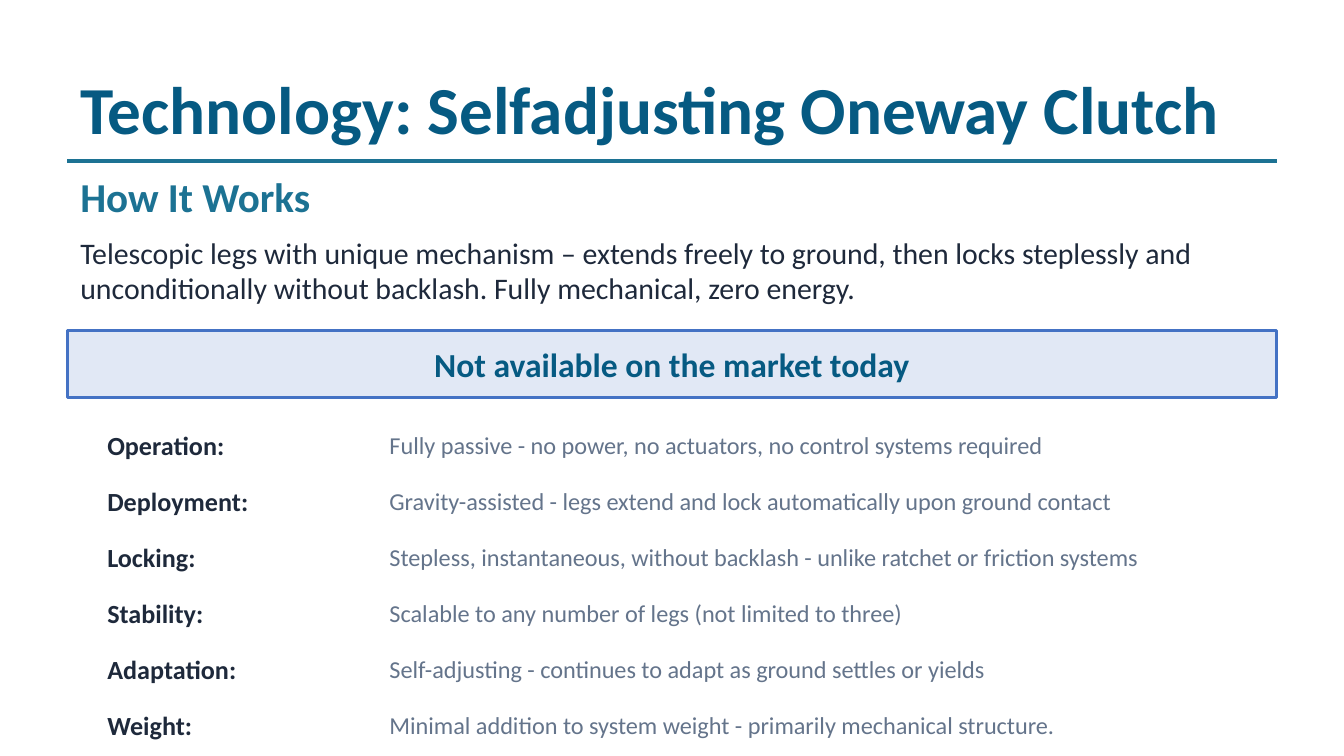
from lxml import etree
from pptx import Presentation
from pptx.dml.color import RGBColor
from pptx.enum.shapes import MSO_CONNECTOR, MSO_SHAPE
from pptx.enum.text import MSO_ANCHOR, PP_ALIGN
from pptx.oxml.ns import qn
from pptx.util import Pt

STRAIGHT = MSO_CONNECTOR.STRAIGHT
RECTANGLE = MSO_SHAPE.RECTANGLE
MIDDLE = MSO_ANCHOR.MIDDLE
LEFT, CENTER = PP_ALIGN.LEFT, PP_ALIGN.CENTER

NAVY, TEAL, INK, SLATE = "065A82", "1C7293", "1E293B", "64748B"
PALE_BLUE, BLUE = "DAE3F3", "4472C4"

MARGIN, CONTENT_WIDTH = 36, 648
LABEL_LEFT, DETAIL_LEFT = 50.4, 201.6
ROWS_TOP, ROW_STEP, ROW_HEIGHT = 227.5, 30, 21.6

FEATURES = [
    ("Operation:", "Fully passive - no power, no actuators, no control systems required"),
    ("Deployment:", "Gravity-assisted - legs extend and lock automatically upon ground contact"),
    ("Locking:", "Stepless, instantaneous, without backlash - unlike ratchet or friction systems"),
    ("Stability:", "Scalable to any number of legs (not limited to three)"),
    ("Adaptation:", "Self-adjusting - continues to adapt as ground settles or yields"),
    ("Weight:", "Minimal addition to system weight - primarily mechanical structure."),
]


def color(value):
    return RGBColor.from_string(value)


class SlideBuilder:
    font = "Calibri"

    def __init__(self, page):
        self.page = page

    def text(self, content, left, top, width, height, size, ink, bold=False, align=LEFT):
        box = self.page.shapes.add_textbox(Pt(left), Pt(top), Pt(width), Pt(height))
        frame = box.text_frame
        frame.word_wrap = True
        frame.vertical_anchor = MIDDLE
        para = frame.paragraphs[0]
        para.alignment = align
        span = para.add_run()
        span.text = content
        span.font.name = self.font
        span.font.size = Pt(size)
        span.font.bold = bold
        span.font.color.rgb = color(ink)

    def rule(self, left, top, width, ink, weight):
        line = self.page.shapes.add_connector(
            STRAIGHT, Pt(left), Pt(top), Pt(left + width), Pt(top))
        line.line.color.rgb = color(ink)
        line.line.width = Pt(weight)
        etree.SubElement(line._element.spPr, qn("a:effectLst"))

    def panel(self, left, top, width, height, fill, opacity, outline, weight):
        """Draw a rectangle whose fill has the given opacity in percent."""
        panel = self.page.shapes.add_shape(
            RECTANGLE, Pt(left), Pt(top), Pt(width), Pt(height))
        panel.shadow.inherit = False
        panel.fill.solid()
        panel.fill.fore_color.rgb = color(fill)
        tint = panel._element.spPr.find(qn("a:solidFill")).find(qn("a:srgbClr"))
        etree.SubElement(tint, qn("a:alpha"), val=str(opacity * 1000))
        panel.line.color.rgb = color(outline)
        panel.line.width = Pt(weight)


def main():
    deck = Presentation()
    deck.slide_width, deck.slide_height = Pt(720), Pt(405)
    builder = SlideBuilder(deck.slides.add_slide(deck.slide_layouts[6]))

    builder.text("Technology: Selfadjusting Oneway Clutch",
                 MARGIN, 36, CONTENT_WIDTH, 43.2, 36, NAVY, bold=True)
    builder.rule(MARGIN, 86.4, CONTENT_WIDTH, TEAL, 2)
    builder.text("How It Works", MARGIN, 90.7, CONTENT_WIDTH, 28.8, 22, TEAL, bold=True)
    builder.text("Telescopic legs with unique mechanism – extends freely to ground, "
                 "then locks steplessly and unconditionally without backlash. "
                 "Fully mechanical, zero energy.",
                 MARGIN, 123.1, CONTENT_WIDTH, 43.2, 16, INK)

    builder.panel(MARGIN, 177.1, CONTENT_WIDTH, 36, PALE_BLUE, 80, BLUE, 1.5)
    builder.text("Not available on the market today",
                 MARGIN, 184.3, CONTENT_WIDTH, 21.6, 18, NAVY, bold=True, align=CENTER)

    for row, (label, detail) in enumerate(FEATURES):
        top = ROWS_TOP + row * ROW_STEP
        builder.text(label, LABEL_LEFT, top, 144, ROW_HEIGHT, 14, INK, bold=True)
        builder.text(detail, DETAIL_LEFT, top, 482.4, ROW_HEIGHT, 13, SLATE)

    deck.save("out.pptx")


if __name__ == "__main__":
    main()
